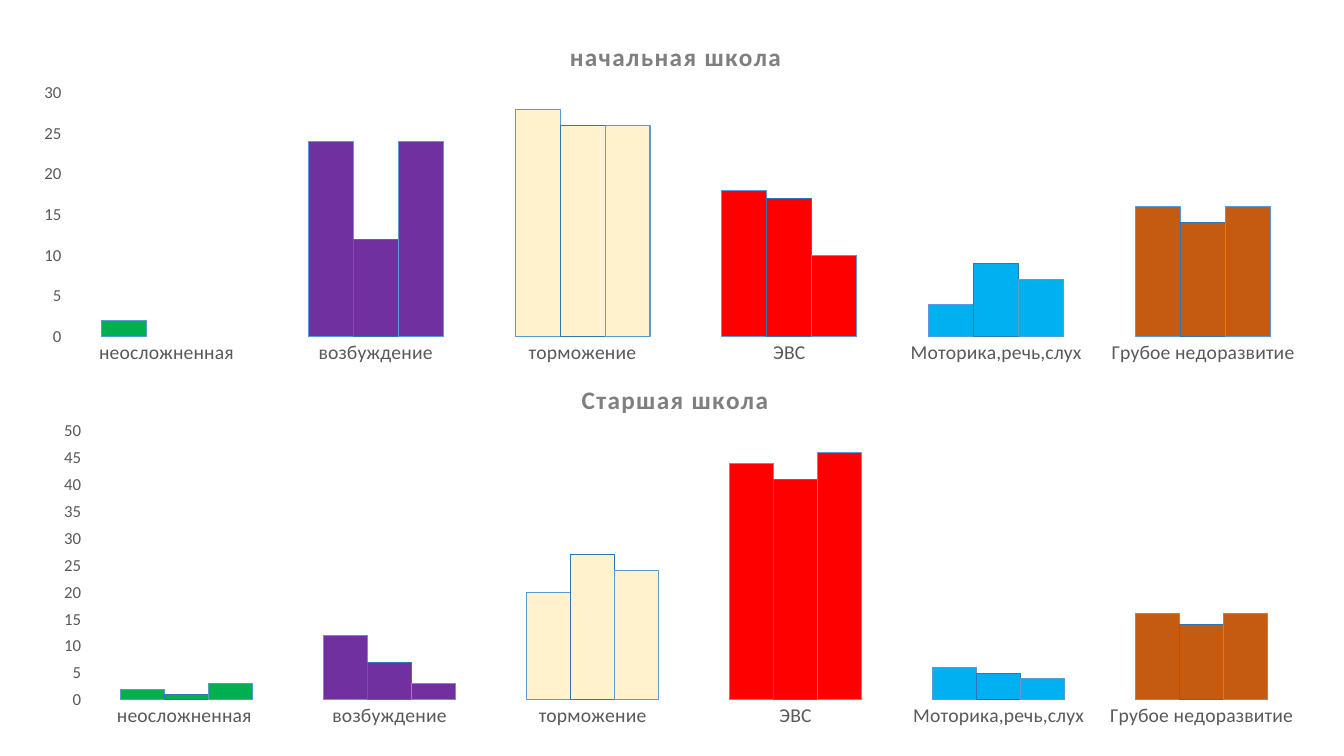
from lxml import etree
from pptx import Presentation
from pptx.chart.data import CategoryChartData
from pptx.dml.color import RGBColor
from pptx.enum import chart as ch
from pptx.oxml import parse_xml
from pptx.oxml.ns import nsdecls
from pptx.util import Inches, Pt

FONT = "Calibri"
TITLE_GRAY = RGBColor(0x7F, 0x7F, 0x7F)
AXIS_GRAY = RGBColor(0x59, 0x59, 0x59)
LIGHT_BLUE = RGBColor(0x5B, 0x9B, 0xD5)
DARK_BLUE = RGBColor(0x2E, 0x75, 0xB6)
GREEN = RGBColor(0x00, 0xB0, 0x50)
PURPLE = RGBColor(0x70, 0x30, 0xA0)
CREAM = RGBColor(0xFF, 0xF2, 0xCC)
RED = RGBColor(0xFF, 0x00, 0x00)
SKY = RGBColor(0x00, 0xB0, 0xF0)
BROWN = RGBColor(0xC5, 0x5A, 0x11)

CATEGORY_COLORS = {
    "неосложненная ": GREEN,
    "возбуждение": PURPLE,
    "торможение": CREAM,
    "ЭВС": RED,
    "Моторика,речь,слух": SKY,
    "Грубое недоразвитие": BROWN,
}
OUTLINES = [LIGHT_BLUE, DARK_BLUE, LIGHT_BLUE]

PRIMARY = [
    (2, 24, 28, 18, 4, 16),
    (None, 12, 26, 17, 9, 14),
    (None, 24, 26, 10, 7, 16),
]
SENIOR = [
    (2, 12, 20, 44, 6, 16),
    (1, 7, 27, 41, 5, 14),
    (3, 3, 24, 46, 4, 16),
]


def manual_layout(target, **sides):
    """Build a c:layout from fractions of the chart area."""
    modes = "".join(f'<c:{side}Mode val="edge"/>' for side in "xy")
    values = "".join(f'<c:{side} val="{value}"/>' for side, value in sides.items())
    return parse_xml(f'<c:layout {nsdecls("c")}><c:manualLayout>'
                     f'{target}{modes}{values}</c:manualLayout></c:layout>')


def style_title(chart, heading):
    title = chart.chart_title
    title.include_in_layout = False
    paragraph = title.text_frame.paragraphs[0]
    paragraph.text = heading
    font = paragraph.font
    font.name, font.size, font.bold = FONT, Pt(18), True
    font.color.rgb = TITLE_GRAY
    paragraph.runs[0].font._element.set("spc", "100")


def style_axis(axis, size):
    axis.has_major_gridlines = False
    axis.major_tick_mark = axis.minor_tick_mark = ch.XL_TICK_MARK.NONE
    axis.format.line.fill.background()
    font = axis.tick_labels.font
    font.name, font.size = FONT, Pt(size)
    font.color.rgb = AXIS_GRAY


def paint_bars(plot):
    """Colour each bar by its category and outline it by its series."""
    for series, outline in zip(plot.series, OUTLINES):
        series.invert_if_negative = False
        for index, color in enumerate(CATEGORY_COLORS.values()):
            bar = series.points[index].format
            bar.fill.solid()
            bar.fill.fore_color.rgb = color
            bar.line.color.rgb = outline
            bar.line.width = Pt(0.75)


def add_school_chart(slide, box, heading, rows, top_value, step, plot_box):
    data = CategoryChartData(number_format="#,##0")
    data.categories = CATEGORY_COLORS
    for number, row in enumerate(rows, 1):
        data.add_series(f"Series {number}", row)
    frame = slide.shapes.add_chart(ch.XL_CHART_TYPE.COLUMN_CLUSTERED,
                                   *map(Inches, box), data)
    chart = frame.chart
    chart.has_legend = False
    chart.font.name, chart.font.size = FONT, Pt(10)
    style_title(chart, heading)
    style_axis(chart.category_axis, 14)
    style_axis(chart.value_axis, 12)
    chart.value_axis.minimum_scale = 0
    chart.value_axis.maximum_scale = top_value
    chart.value_axis.major_unit = step

    plot = chart.plots[0]
    plot.gap_width, plot.overlap = 160, 0
    plot.vary_by_categories = False
    paint_bars(plot)

    plot_area = chart._chartSpace.chart.plotArea
    for layout in plot_area.findall("{*}layout"):
        plot_area.remove(layout)
    plot_area.insert(0, manual_layout('<c:layoutTarget val="inner"/>',
                                      **dict(zip("xywh", plot_box))))


def main():
    deck = Presentation()
    deck.slide_width, deck.slide_height = Inches(13.33), Inches(7.5)
    slide = deck.slides.add_slide(deck.slide_layouts[6])
    add_school_chart(slide, (0.18, 0.22, 13.04, 3.47), "начальная школа",
                     PRIMARY, 30, 5, (0.036, 0.202, 0.944, 0.698))
    add_school_chart(slide, (0.35, 3.62, 12.69, 3.69), "Старшая школа",
                     SENIOR, 50, 5, (0.039, 0.178, 0.952, 0.723))
    deck.save("out.pptx")


if __name__ == "__main__":
    main()
